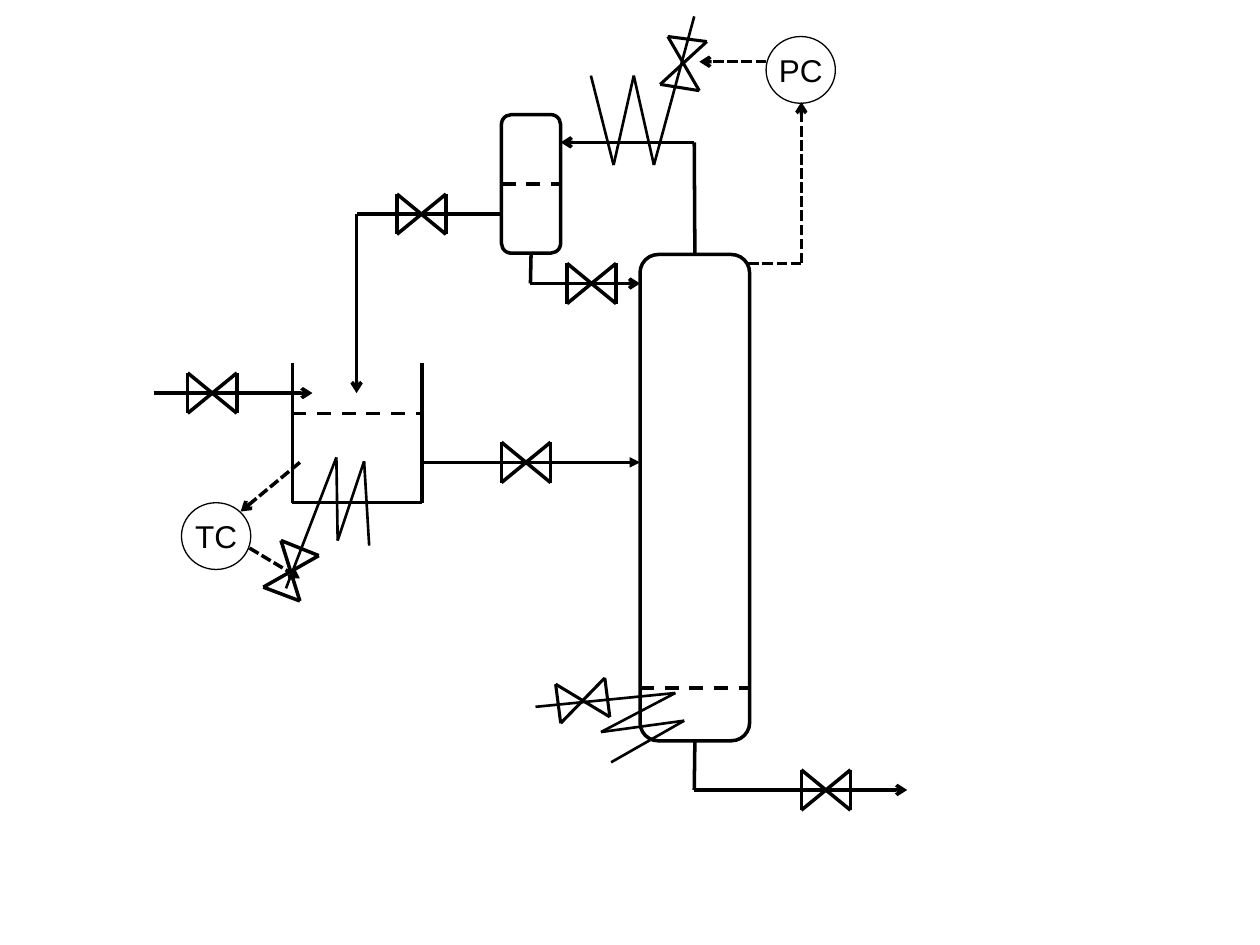
from dataclasses import dataclass
from itertools import pairwise
from typing import Optional

from lxml import etree
from pptx import Presentation
from pptx.dml.color import RGBColor
from pptx.enum.dml import MSO_LINE
from pptx.enum.shapes import MSO_CONNECTOR, MSO_SHAPE
from pptx.enum.text import MSO_ANCHOR, PP_ALIGN
from pptx.oxml.ns import qn
from pptx.util import Inches, Pt

BLACK = RGBColor(0, 0, 0)
STRAIGHT = MSO_CONNECTOR.STRAIGHT
ROUNDED, CIRCLE = MSO_SHAPE.ROUNDED_RECTANGLE, MSO_SHAPE.OVAL
LEVEL_DASH, SIGNAL_DASH = MSO_LINE.DASH, MSO_LINE.SQUARE_DOT
MIDDLE, CENTER = MSO_ANCHOR.MIDDLE, PP_ALIGN.CENTER
TOP, LEFT, BOTTOM, RIGHT = range(4)
VALVE_WIDTH, VALVE_HEIGHT = 0.39, 0.32
CIRCLE_WIDTH, CIRCLE_HEIGHT = 0.55, 0.53
PIPE, VALVE_THIN, COIL, CIRCLE_LINE = 2, 1.75, 1.5, 0.75

Point = tuple[float, float]


@dataclass
class Vessel:
    left: float
    top: float
    width: float
    height: float


@dataclass
class Run:
    points: list[Point]
    weight: float = PIPE
    dash: Optional[int] = None
    head: Optional[str] = None
    start: Optional[tuple[str, int]] = None
    end: Optional[tuple[str, int]] = None


@dataclass
class Valve:
    corners: tuple[Point, Point, Point, Point]
    weight: float = PIPE


@dataclass
class Controller:
    label: str
    left: float
    top: float


def level_valve(left: float, middle: float) -> Valve:
    right = left + VALVE_WIDTH
    top, bottom = middle - VALVE_HEIGHT / 2, middle + VALVE_HEIGHT / 2
    return Valve(((left, top), (left, bottom), (right, top), (right, bottom)))


VESSELS = {
    "column": Vessel(5.08, 2.02, 0.87, 3.86),
    "drum": Vessel(3.98, 0.91, 0.47, 1.1),
}

RUNS = [
    Run([(2.32, 2.88), (2.32, 3.99), (3.35, 3.99), (3.35, 2.88)]),
    Run([(2.32, 3.28), (3.35, 3.28)], dash=LEVEL_DASH),
    Run([(3.35, 3.67), (5.08, 3.67)], head="triangle"),
    Run([(5.51, 2.02), (5.51, 1.13), (4.45, 1.13)], head="arrow", start=("column", TOP)),
    Run([(3.98, 1.7), (2.83, 1.7), (2.83, 3.12)], head="arrow"),
    Run([(1.22, 3.12), (2.48, 3.12)], head="arrow"),
    Run([(5.51, 5.88), (5.51, 6.27), (7.2, 6.27)], head="arrow", start=("column", BOTTOM)),
    Run([(4.21, 2.02), (4.21, 2.25), (5.08, 2.25)], head="arrow", start=("drum", BOTTOM)),
    Run([(3.98, 1.47), (4.45, 1.47)], dash=LEVEL_DASH, start=("drum", LEFT), end=("drum", RIGHT)),
    Run([(5.08, 5.46), (5.94, 5.46)], dash=LEVEL_DASH),
    Run([(4.69, 0.6), (4.87, 1.31), (5.03, 0.6), (5.19, 1.31), (5.51, 0.13)], COIL),
    Run([(4.85, 6.05), (5.43, 5.72), (4.77, 5.81), (5.36, 5.5), (4.25, 5.61)], COIL),
    Run([(2.93, 4.33), (2.89, 3.66), (2.68, 4.29), (2.67, 3.63), (2.27, 4.67)], COIL),
    Run([(2.38, 3.67), (1.91, 4.06)], dash=SIGNAL_DASH, head="arrow"),
    Run([(1.98, 4.35), (2.38, 4.59)], dash=SIGNAL_DASH, head="arrow"),
    Run([(6.08, 0.49), (5.55, 0.49)], dash=SIGNAL_DASH, head="arrow"),
    Run([(5.94, 2.09), (6.36, 2.09), (6.36, 0.81)], dash=SIGNAL_DASH, head="arrow"),
]

VALVES = [
    level_valve(3.15, 1.7),
    level_valve(4.5, 2.25),
    level_valve(1.49, 3.12),
    level_valve(6.36, 6.27),
    level_valve(3.98, 3.67),
    Valve(((4.41, 5.43), (4.45, 5.74), (4.8, 5.38), (4.84, 5.69)), VALVE_THIN),
    Valve(((5.24, 0.67), (5.55, 0.72), (5.3, 0.29), (5.61, 0.33)), VALVE_THIN),
    Valve(((2.09, 4.66), (2.38, 4.77), (2.23, 4.29), (2.53, 4.41))),
]

CONTROLLERS = [Controller("PC", 6.08, 0.29), Controller("TC", 1.44, 3.99)]


def apply_format(target, values: dict) -> None:
    for name, value in values.items():
        setattr(target, name, value)


def draw_segment(shapes, begin: Point, end: Point, weight: float, dash=None, head=None):
    segment = shapes.add_connector(STRAIGHT, *map(Inches, (*begin, *end)))
    segment.line.color.rgb = BLACK
    apply_format(segment.line, {"width": Pt(weight), "dash_style": dash})
    outline = segment.line._get_or_add_ln()
    if head:
        etree.SubElement(outline, qn("a:tailEnd"), type=head)
    etree.SubElement(outline.getparent(), qn("a:effectLst"))
    return segment


def draw_run(shapes, run: Run, vessels: dict) -> None:
    legs = list(pairwise(run.points))
    segments = [
        draw_segment(shapes, begin, end, run.weight, run.dash, run.head if end == run.points[-1] else None)
        for begin, end in legs
    ]
    if run.start:
        vessel, side = run.start
        segments[0].begin_connect(vessels[vessel], side)
    if run.end:
        vessel, side = run.end
        segments[-1].end_connect(vessels[vessel], side)


def draw_valve(shapes, valve: Valve) -> None:
    a, b, c, d = valve.corners
    for begin, end in ((a, b), (b, c), (a, d), (c, d)):
        draw_segment(shapes, begin, end, valve.weight)


def draw_outline(shapes, kind, box: Vessel, weight: float):
    outline = shapes.add_shape(kind, *map(Inches, (box.left, box.top, box.width, box.height)))
    outline.shadow.inherit = False
    outline.fill.background()
    outline.line.color.rgb = BLACK
    outline.line.width = Pt(weight)
    return outline


def draw_controller(shapes, controller: Controller) -> None:
    box = Vessel(controller.left, controller.top, CIRCLE_WIDTH, CIRCLE_HEIGHT)
    frame = draw_outline(shapes, CIRCLE, box, CIRCLE_LINE).text_frame
    apply_format(frame, {"word_wrap": False, "vertical_anchor": MIDDLE})
    label = frame.paragraphs[0]
    apply_format(label, {"text": controller.label, "alignment": CENTER})
    font = label.runs[0].font
    apply_format(font, {"name": "Arial", "size": Pt(18)})
    font.color.rgb = BLACK


def main() -> None:
    deck = Presentation()
    apply_format(deck, {"slide_width": Inches(10), "slide_height": Inches(7.5)})
    slide = deck.slides.add_slide(deck.slide_layouts[6])
    flowsheet = slide.shapes.add_group_shape().shapes
    vessels = {name: draw_outline(flowsheet, ROUNDED, box, PIPE) for name, box in VESSELS.items()}
    for run in RUNS:
        draw_run(flowsheet, run, vessels)
    for valve in VALVES:
        draw_valve(flowsheet, valve)
    for controller in CONTROLLERS:
        draw_controller(flowsheet, controller)
    deck.save("out.pptx")


if __name__ == "__main__":
    main()
